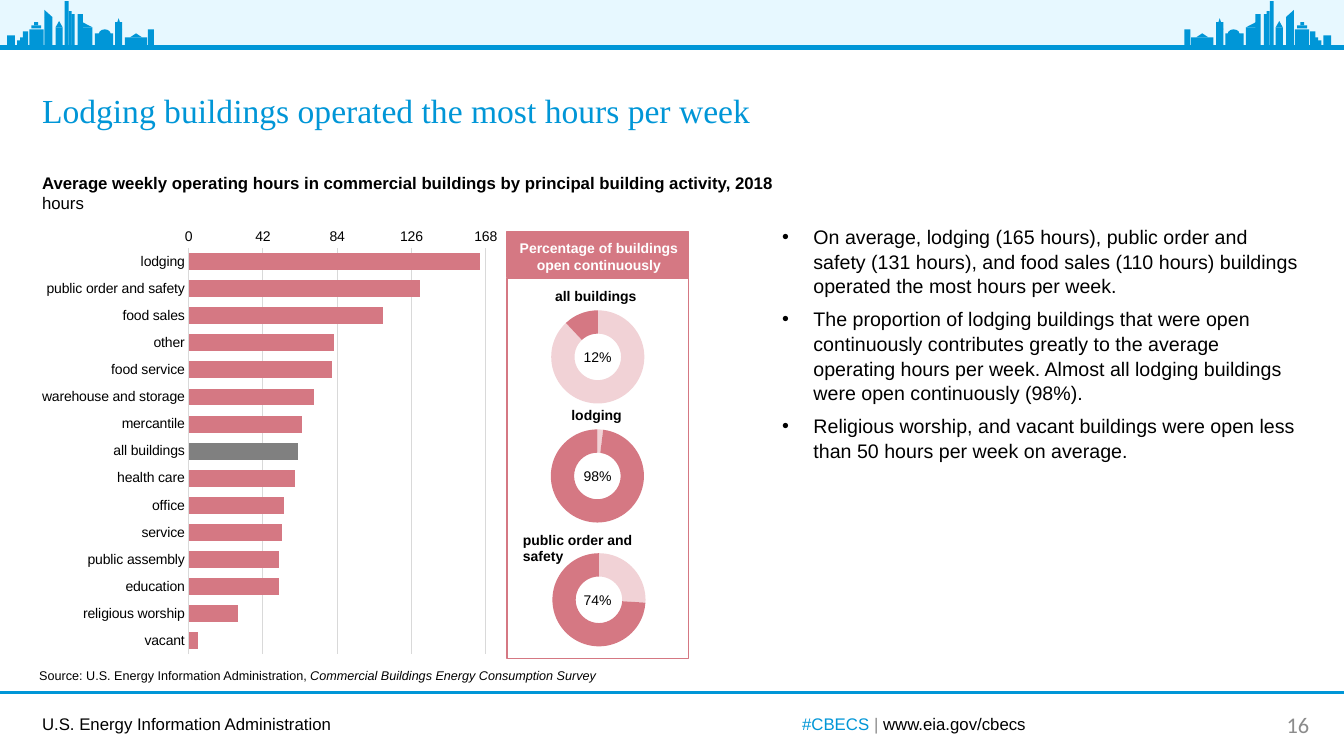
from lxml.etree import SubElement
from pptx import Presentation
from pptx.chart.data import CategoryChartData
from pptx.dml.color import RGBColor
from pptx.enum.chart import XL_CHART_TYPE, XL_TICK_MARK
from pptx.enum.shapes import MSO_CONNECTOR, MSO_SHAPE
from pptx.enum.text import MSO_ANCHOR, PP_ALIGN
from pptx.oxml import parse_xml
from pptx.oxml.ns import nsdecls, qn
from pptx.util import Cm, Pt

BLUE = RGBColor(0x00, 0x96, 0xD7)
SKY = RGBColor(0xE7, 0xF8, 0xFF)
ROSE = RGBColor(0xD5, 0x78, 0x83)
PALE = RGBColor(0xF1, 0xD2, 0xD6)
GRAY = RGBColor(0x80, 0x80, 0x80)
MUTED = RGBColor(0x8C, 0x8C, 0x8C)
GRID = RGBColor(0xD9, 0xD9, 0xD9)
BLACK = RGBColor(0, 0, 0)
WHITE = RGBColor(0xFF, 0xFF, 0xFF)
LEFT, MID = PP_ALIGN.LEFT, PP_ALIGN.CENTER
TOP, CENTER, BASE = MSO_ANCHOR.TOP, MSO_ANCHOR.MIDDLE, MSO_ANCHOR.BOTTOM
WIDE = 33.87

deck = Presentation()
deck.slide_width, deck.slide_height = Cm(WIDE), Cm(19.05)
slide = deck.slides.add_slide(deck.slide_layouts[6])
shapes = slide.shapes


def add_text(box, paras, size, align=LEFT, anchor=TOP, face="Arial"):
    frame = shapes.add_textbox(*map(Cm, box)).text_frame
    frame.word_wrap = True
    frame.vertical_anchor = anchor
    for i, runs in enumerate(paras):
        para = frame.paragraphs[0] if i == 0 else frame.add_paragraph()
        para.alignment = align
        for text, color, style in runs:
            run = para.add_run()
            run.text = text
            run.font.color.rgb = color
            look = {"size": Pt(size), "name": face, "bold": "b" in style, "italic": "i" in style}
            for key, value in look.items():
                setattr(run.font, key, value)
    return frame


def add_chart(kind, box, names, values, area):
    data = CategoryChartData()
    data.categories = names
    data.add_series("Series 1", values)
    chart = shapes.add_chart(kind, *map(Cm, box), data).chart
    chart.has_legend = chart.has_title = False
    for key, value in {"size": Pt(10), "name": "Arial"}.items():
        setattr(chart.font, key, value)
    chart.font.color.rgb = BLACK
    root = chart._chartSpace
    root.find(qn("c:txPr")).addprevious(parse_xml(
        f'<c:spPr {nsdecls("c", "a")}><a:noFill/><a:ln><a:noFill/></a:ln></c:spPr>'))
    plot = root.find(".//" + qn("c:plotArea"))
    for old in plot.findall(qn("c:layout")):
        plot.remove(old)
    layout = parse_xml(f'<c:layout {nsdecls("c")}><c:manualLayout/></c:layout>')
    plot.insert(0, layout)
    marks = [("layoutTarget", "inner"), ("xMode", "edge"), ("yMode", "edge"), *zip("xywh", area)]
    for tag, value in marks:
        SubElement(layout[0], qn("c:" + tag)).set("val", str(value))
    return chart


band = shapes.add_shape(MSO_SHAPE.RECTANGLE, 0, 0, Cm(WIDE), Cm(1.14))
band.shadow.inherit = False
band.fill.solid()
band.fill.fore_color.rgb = SKY
band.line.fill.background()

for y, width in [(1.19, 3.5), (17.45, 2.25)]:
    rule = shapes.add_connector(MSO_CONNECTOR.STRAIGHT, 0, Cm(y), Cm(WIDE), Cm(y))
    rule.line.color.rgb = BLUE
    rule.line.width = Pt(width)
    SubElement(rule._element.spPr, qn("a:effectLst"))

skyline = {
    MSO_SHAPE.RECTANGLE: [
        (0.18, 0.89, 0.2, 0.28), (0.43, 1.02, 0.08, 0.15), (0.51, 0.94, 0.08, 0.23),
        (0.58, 0.79, 0.13, 0.38), (0.74, 0.74, 0.36, 0.43), (0.79, 0.64, 0.25, 0.08),
        (0.86, 0.56, 0.1, 0.08), (1.12, 0.43, 0.2, 0.74), (1.4, 0.69, 0.18, 0.48),
        (1.63, 0.03, 0.1, 1.14), (1.73, 0.28, 0.08, 0.89), (1.8, 0.36, 0.08, 0.81),
        (1.96, 0.36, 0.13, 0.81), (2.08, 0.69, 0.25, 0.48), (2.39, 0.84, 0.46, 0.33),
        (2.9, 0.56, 0.18, 0.61), (3.15, 0.94, 0.56, 0.23), (3.73, 0.74, 0.15, 0.43)],
    MSO_SHAPE.RIGHT_TRIANGLE: [(1.12, 0.25, 0.2, 0.18), (2.08, 0.56, 0.25, 0.13)],
    MSO_SHAPE.ISOSCELES_TRIANGLE: [
        (1.4, 0.53, 0.18, 0.16), (2.9, 0.46, 0.18, 0.28), (3.28, 0.84, 0.3, 0.1)],
    MSO_SHAPE.OVAL: [(2.49, 0.74, 0.3, 0.23)],
}
for flip in (False, True):
    for kind, parts in skyline.items():
        for x, y, w, h in parts:
            left = 33.73 - x - w if flip else x
            part = shapes.add_shape(kind, Cm(left), Cm(y), Cm(w), Cm(h))
            part.shadow.inherit = False
            part.fill.solid()
            part.fill.fore_color.rgb = BLUE
            part.line.fill.background()
            if flip:
                part._element.spPr.xfrm.set("flipH", "1")

add_text((0.81, 1.3, 32.23, 2.11), [[("Lodging buildings operated the most hours per week", BLUE, "")]],
         24, anchor=BASE, face="Times New Roman")
add_text((0.81, 4.22, 20.55, 1.27), [
    [("Average weekly operating hours in commercial buildings by principal building activity, 2018", BLACK, "b")],
    [("hours", BLACK, "")]], 12)

for y, h, full in [(5.84, 1.14, True), (7.01, 9.58, False)]:
    panel = shapes.add_shape(MSO_SHAPE.RECTANGLE, Cm(12.78), Cm(y), Cm(4.57), Cm(h))
    panel.shadow.inherit = False
    panel.line.color.rgb = ROSE
    panel.line.width = Pt(1)
    if full:
        panel.fill.solid()
        panel.fill.fore_color.rgb = ROSE
    else:
        panel.fill.background()
add_text((12.78, 5.92, 4.62, 1.12), [[("Percentage of buildings open continuously", WHITE, "b")]], 10, MID)

rings = [
    ("all buildings", 12, 13.54, 7.47, (13.74, 7.11, 2.8)),
    ("lodging", 98, 13.53, 10.47, (14.15, 10.13, 2.2)),
    ("public order and safety", 74, 13.57, 13.59, (12.93, 13.26, 4.2)),
]
for name, share, x, y, (left, top, width) in rings:
    ring = add_chart(XL_CHART_TYPE.DOUGHNUT, (x, y, 3.05, 3.05), ["1", "2"],
                     [100 - share, share], (0.115, 0.115, 0.77, 0.77))
    ring.plots[0]._element.find(qn("c:holeSize")).set("val", "70")
    for i, color in enumerate((PALE, ROSE)):
        fill = ring.series[0].points[i].format.fill
        fill.solid()
        fill.fore_color.rgb = color
    add_text((14.02, y + 1.18, 2.08, 0.68), [[(f"{share}%", BLACK, "")]], 10, MID)
    add_text((left, top, width, 0.68), [[(name, BLACK, "b")]], 10)

hours = {
    "lodging": 165, "public order and safety": 131, "food sales": 110, "other": 82,
    "food service": 81, "warehouse and storage": 71, "mercantile": 64, "all buildings": 62,
    "health care": 60, "office": 54, "service": 53, "public assembly": 51,
    "education": 51, "religious worship": 28, "vacant": 5,
}
bars = add_chart(XL_CHART_TYPE.BAR_CLUSTERED, (0.81, 5.54, 11.96, 11.18),
                 list(hours), list(hours.values()), (0.33, 0.064, 0.626, 0.915))
plot = bars.plots[0]
plot.gap_width = 60
plot.vary_by_categories = False
series = plot.series[0]
total = series.points[list(hours).index("all buildings")]
for item, color in [(series, ROSE), (total, GRAY)]:
    item.format.fill.solid()
    item.format.fill.fore_color.rgb = color
series.invert_if_negative = False

names, scale = bars.category_axis, bars.value_axis
ticks = {"major_tick_mark": XL_TICK_MARK.NONE, "minor_tick_mark": XL_TICK_MARK.NONE}
looks = [
    (names, {**ticks, "reverse_order": True, "has_major_gridlines": False}),
    (scale, {**ticks, "minimum_scale": 0, "maximum_scale": 168, "major_unit": 42,
             "has_major_gridlines": True}),
]
for axis, look in looks:
    for key, value in look.items():
        setattr(axis, key, value)
for line in (names.format.line, scale.major_gridlines.format.line):
    line.color.rgb = GRID
    line.width = Pt(0.75)
scale.format.line.fill.background()
scale.tick_labels.number_format = "#,##0"
scale.tick_labels.number_format_is_linked = False

points = [
    "On average, lodging (165 hours), public order and safety (131 hours), and food sales (110 hours) buildings operated the most hours per week.",
    "The proportion of lodging buildings that were open continuously contributes greatly to the average operating hours per week. Almost all lodging buildings were open continuously (98%).",
    "Religious worship, and vacant buildings were open less than 50 hours per week on average.",
]
notes = add_text((19.46, 5.51, 13.59, 6.88), [[(text, BLACK, "")] for text in points], 14)
for para in notes.paragraphs:
    para.space_after = Pt(6)
    para.line_spacing = 1.05
    props = para._p.get_or_add_pPr()
    props.set("marL", str(Cm(0.79)))
    props.set("indent", str(-Cm(0.79)))
    SubElement(props, qn("a:buFont")).set("typeface", "Arial")
    SubElement(props, qn("a:buChar")).set("char", "•")

add_text((0.74, 16.71, 16.94, 0.64), [[
    ("Source: U.S. Energy Information Administration, ", BLACK, ""),
    ("Commercial Buildings Energy Consumption Survey", BLACK, "i")]], 9)
add_text((0.81, 17.86, 9.4, 0.76), [[("U.S. Energy Information Administration", BLACK, "")]], 12)
add_text((17.32, 17.73, 11.43, 1.02), [[
    ("#CBECS ", BLUE, ""), ("| ", MUTED, ""), ("www.eia.gov/cbecs", BLACK, "")]], 12, MID, CENTER)
add_text((31.95, 17.75, 1.52, 1.02), [[("16", MUTED, "")]], 16, MID, CENTER, "Calibri")

deck.save("out.pptx")
